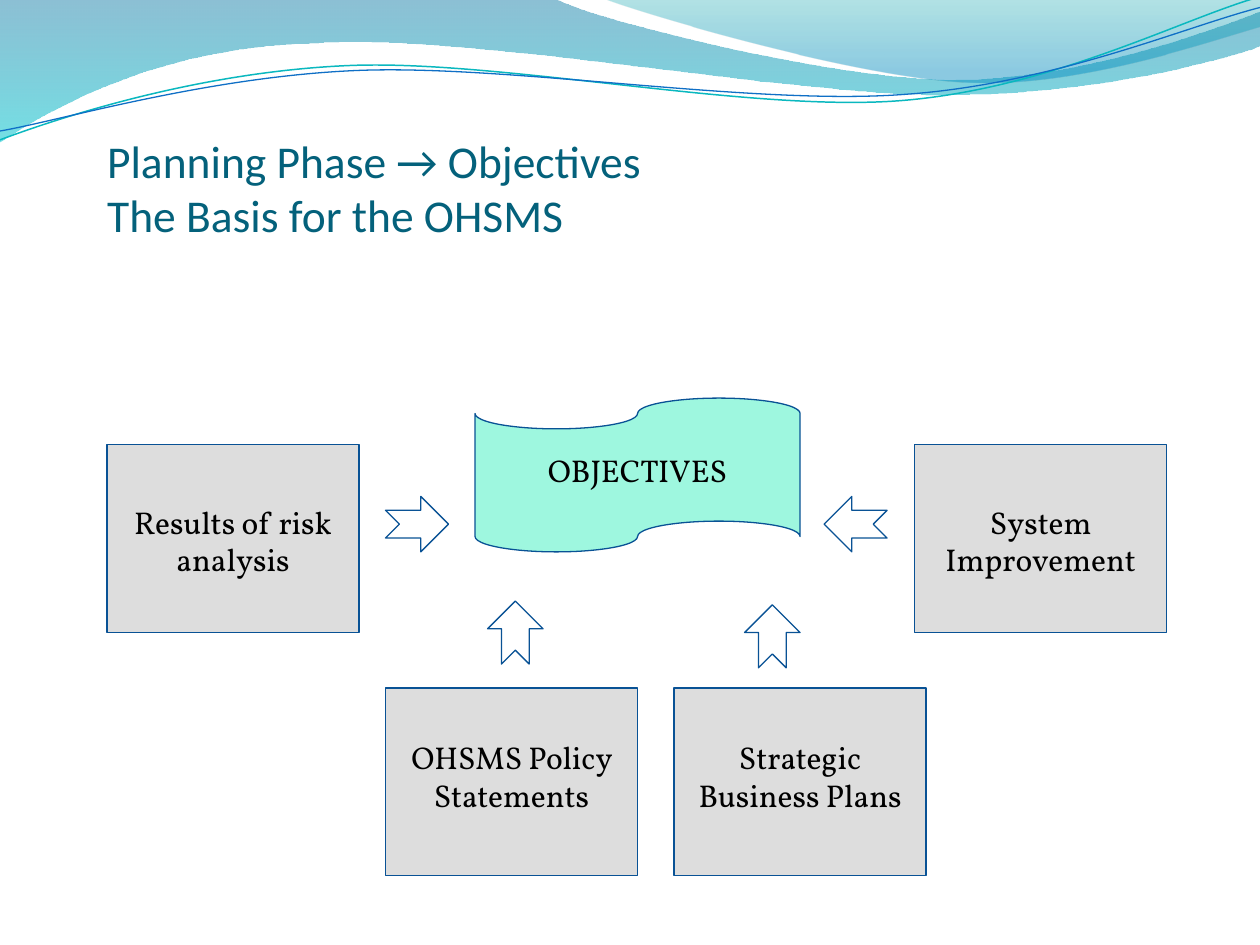
import math
from lxml import etree
from pptx import Presentation
from pptx import util as u
from pptx.dml.color import RGBColor
from pptx.enum import shapes, text
from pptx.oxml.ns import qn

INK = dict(
    title="04617B", text="000000", edge="095295", box="D9D9D9", tape="94F7DC",
    white="FFFFFF", steel="0074A1", cyan="00C6CF", teal="00A1A9", sky="008BBF",
    aqua="0AB8BF", blue="0F6FC6",
)
HUE = {name: RGBColor.from_string(code) for name, code in INK.items()}
KIND = shapes.MSO_SHAPE

deck = Presentation()
deck.slide_width, deck.slide_height = u.Inches(10), u.Inches(7.5)
page = deck.slides.add_slide(deck.slide_layouts[6])
cell = deck.slide_width // 10


def fade(shape, *parts):
    for tint, part in zip(shape._element.spPr.iter(qn("a:srgbClr")), parts):
        etree.SubElement(tint, qn("a:alpha")).set("val", str(part * 1000))


def write(words, spot, font, size, hue, align, anchor):
    label = page.shapes.add_textbox(*[round(n * cell) for n in spot])
    frame = label.text_frame
    frame.word_wrap = True
    frame.vertical_anchor = anchor
    frame.text = words
    para = frame.paragraphs[0]
    para.alignment = align
    para.font.name, para.font.size = font, u.Pt(size)
    para.font.color.rgb = HUE[hue]
    return frame


tilt = 2.7
waves = [
    ([(0, 0), (4.4, -0.01), (4.76, 0.17, 6.64, 0.63, 7.58, 0.63),
      (8.53, 0.63, 9.58, 0.26, 10, 0.09), (10.01, 0.36),
      (9.83, 0.44, 8.7, 0.76, 7.46, 0.75), (6.22, 0.75, 3.82, 0.28, 2.57, 0.34),
      (1.29, 0.36, 0.46, 0.83, -0.01, 1.13)],
     [("steel", 0, 45), ("cyan", 1, 55)], None),
    ([(4.79, -0.01), (5.09, 0.11, 6.82, 0.62, 7.69, 0.65),
      (8.56, 0.69, 9.61, 0.32, 10, 0.21), (10, 0)],
     [("teal", 0, 30), ("sky", 0.8, 45)], None),
    ([(0, 1.11), (0.48, 0.93, 1.58, 0.57, 2.77, 0.52),
      (3.95, 0.47, 5.93, 0.89, 7.13, 0.8), (8.33, 0.71, 9.38, 0.15, 9.98, -0.02)],
     None, ("aqua", 0.85, 4.99, 0.58)),
    ([(0, 1.04), (0.47, 0.96, 1.64, 0.61, 2.83, 0.56),
      (4.03, 0.51, 5.97, 0.84, 7.17, 0.75), (8.36, 0.67, 9.41, 0.21, 10, 0.06)],
     None, ("blue", 0.75, 5, 0.59)),
]
for route, blend, pen in waves:
    dots = [leg[n:n + 2] for leg in route for n in range(0, len(leg), 2)]
    if pen:
        hue, width, midx, midy = pen
        cos, sin = math.cos(math.radians(tilt)), math.sin(math.radians(tilt))
        dots = [(midx + (x - midx) * cos - (y - midy) * sin,
                 midy + (x - midx) * sin + (y - midy) * cos) for x, y in dots]
    dots = [(x * cell, y * cell) for x, y in dots]
    pencil = page.shapes.build_freeform(*dots[0])
    pencil.add_line_segments(dots[1:], close=bool(blend))
    wave = pencil.convert_to_shape()
    wave.shadow.inherit = False
    lines = iter(list(wave._element.spPr.iter(qn("a:lnTo"))))
    for leg in route[1:]:
        first = next(lines)
        if len(leg) == 6:
            first.tag = qn("a:cubicBezTo")
            for _ in range(2):
                extra = next(lines)
                first.append(extra[0])
                extra.getparent().remove(extra)
    if blend:
        wave.fill.gradient()
        wave.fill.gradient_angle = 270
        for stop, (hue, place, part) in zip(wave.fill.gradient_stops, blend):
            stop.color.rgb = HUE[hue]
            stop.position = place
        fade(wave, *[part for hue, place, part in blend])
        wave.line.fill.background()
    else:
        wave.rotation = 360 - tilt
        wave.fill.background()
        wave.line.color.rgb, wave.line.width = HUE[hue], u.Pt(width)

head = write("Planning Phase → Objectives\vThe Basis for the OHSMS",
             (0.85, 0.65, 8.09, 1.27), "Calibri", 26, "title",
             text.PP_ALIGN.LEFT, text.MSO_ANCHOR.BOTTOM)
head.margin_left = head.margin_right = head.margin_bottom = 0

wide, tall = 2, 1.49
upper, lower = 3.53, 5.46
boxes = [
    (0.85, upper, 0.41, "Results of risk analysis"),
    (3.06, lower, 0.35, "OHSMS Policy Statements"),
    (5.35, lower, 0.35, "Strategic Business Plans"),
    (7.26, upper, 0.41, "System Improvement"),
]
arrows = [(3.06, 3.94, 0), (3.84, 4.8, 270), (5.88, 4.83, 270), (6.54, 3.94, 180)]

items = [(KIND.FLOWCHART_PUNCHED_TAPE, (3.77, 3.16, 2.58, 1.22), "tape", 90, 0,
          "OBJECTIVES", (3.84, 3.53, 2.44, 0.4))]
items += [(KIND.RECTANGLE, (x, y, wide, tall), "box", 88, 0,
           words, (x, y + drop, wide, 0.71)) for x, y, drop, words in boxes]
items += [(KIND.NOTCHED_RIGHT_ARROW, (x, y, 0.5, 0.44), "white", 100, turn,
           None, None) for x, y, turn in arrows]

for kind, spot, hue, part, turn, words, place in items:
    shape = page.shapes.add_shape(kind, *[round(n * cell) for n in spot])
    shape.shadow.inherit = False
    shape.rotation = turn
    shape.fill.solid()
    shape.fill.fore_color.rgb = HUE[hue]
    if part < 100:
        fade(shape, part)
    shape.line.color.rgb, shape.line.width = HUE["edge"], u.Pt(0.75)
    if words:
        label = write(words, place, "Vollkorn", 18, "text",
                      text.PP_ALIGN.CENTER, text.MSO_ANCHOR.TOP)
        label.auto_size = text.MSO_AUTO_SIZE.SHAPE_TO_FIT_TEXT

deck.save("out.pptx")
